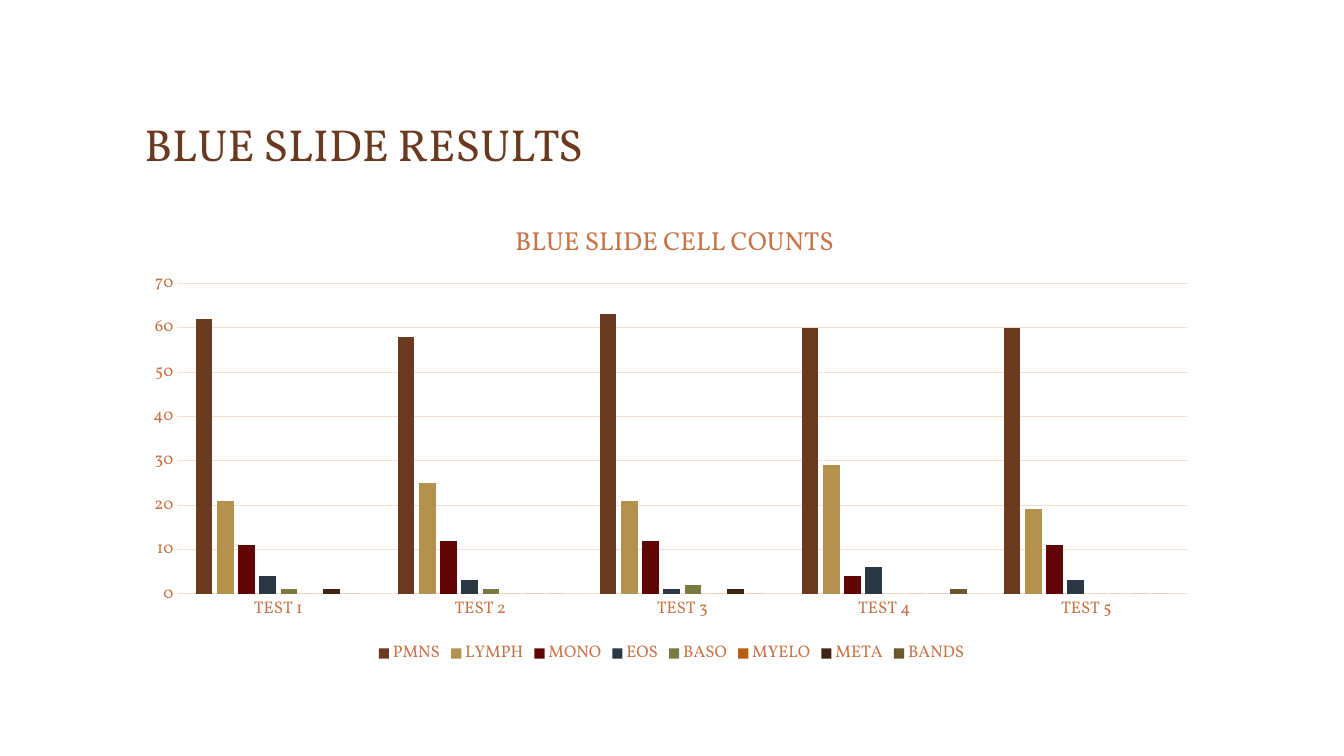
"""Build the blue slide results slide with its clustered column chart."""
from dataclasses import dataclass

import pptx
import pptx.chart.data
import pptx.dml.color
import pptx.enum.chart
import pptx.enum.text
import pptx.oxml
import pptx.oxml.ns
import pptx.util

Pt = pptx.util.Pt
RGBColor = pptx.dml.color.RGBColor

BROWN = RGBColor(0x6A, 0x3A, 0x20)
COPPER = RGBColor(0xC7, 0x73, 0x45)
GRID = RGBColor(0xF2, 0xDF, 0xD4)
GOLD = RGBColor(0xB4, 0x91, 0x4C)
MAROON = RGBColor(0x61, 0x06, 0x06)
NAVY = RGBColor(0x2B, 0x37, 0x42)
OLIVE = RGBColor(0x78, 0x7A, 0x41)
ORANGE = RGBColor(0xB9, 0x5E, 0x14)
DARK_BROWN = RGBColor(0x40, 0x23, 0x13)
BRONZE = RGBColor(0x6C, 0x57, 0x2D)
FONT_NAME = "Vollkorn"
LEFT, WIDTH = Pt(96), Pt(767.5)


@dataclass(frozen=True)
class CellType:
    name: str
    counts: tuple[int, ...]
    color: RGBColor


TESTS = [f"TEST {number}" for number in range(1, 6)]
CELL_TYPES = [
    CellType("PMNS", (62, 58, 63, 60, 60), BROWN),
    CellType("LYMPH", (21, 25, 21, 29, 19), GOLD),
    CellType("MONO", (11, 12, 12, 4, 11), MAROON),
    CellType("EOS", (4, 3, 1, 6, 3), NAVY),
    CellType("BASO", (1, 1, 2, 0, 0), OLIVE),
    CellType("MYELO", (0, 0, 0, 0, 0), ORANGE),
    CellType("META", (1, 0, 1, 0, 0), DARK_BROWN),
    CellType("BANDS", (0, 0, 0, 1, 0), BRONZE),
]


def set_attributes(target: object, values: dict[str, object]) -> None:
    for name, value in values.items():
        setattr(target, name, value)


def set_font(font: object, size: float, color: RGBColor) -> None:
    set_attributes(font, {"name": FONT_NAME, "size": Pt(size), "bold": False})
    font.color.rgb = color


def set_line(line: object) -> None:
    line.color.rgb = GRID
    line.width = Pt(0.75)


def set_layout(parent: object, before: str, values: dict[str, object]) -> None:
    for old in parent.findall(pptx.oxml.ns.qn("c:layout")):
        parent.remove(old)
    settings = "".join(f'<c:{tag} val="{value}"/>' for tag, value in values.items())
    layout = pptx.oxml.parse_xml(
        f'<c:layout {pptx.oxml.ns.nsdecls("c")}>'
        f"<c:manualLayout>{settings}</c:manualLayout></c:layout>"
    )
    parent.find(pptx.oxml.ns.qn(before)).addprevious(layout)


def add_title(slide: object) -> None:
    shape = slide.shapes.add_textbox(LEFT, Pt(34), WIDTH, Pt(92))
    set_attributes(shape.text_frame, {
        "word_wrap": True,
        "vertical_anchor": pptx.enum.text.MSO_ANCHOR.BOTTOM,
    })
    paragraph = shape.text_frame.paragraphs[0]
    paragraph.text = "BLUE SLIDE RESULTS"
    paragraph.line_spacing = 0.9
    set_font(paragraph.runs[0].font, 32, BROWN)


def format_axes(chart: object) -> None:
    for axis in (chart.category_axis, chart.value_axis):
        set_attributes(axis, {
            "major_tick_mark": pptx.enum.chart.XL_TICK_MARK.NONE,
            "minor_tick_mark": pptx.enum.chart.XL_TICK_MARK.NONE,
        })
        set_font(axis.tick_labels.font, 12, COPPER)
    set_line(chart.category_axis.format.line)
    set_attributes(chart.value_axis, {
        "minimum_scale": 0, "maximum_scale": 70, "major_unit": 10,
        "has_major_gridlines": True,
    })
    chart.value_axis.format.line.fill.background()
    set_line(chart.value_axis.major_gridlines.format.line)


def add_cell_chart(slide: object) -> None:
    data = pptx.chart.data.CategoryChartData()
    data.categories = TESTS
    for cell_type in CELL_TYPES:
        data.add_series(cell_type.name, cell_type.counts)
    chart = slide.shapes.add_chart(
        pptx.enum.chart.XL_CHART_TYPE.COLUMN_CLUSTERED,
        LEFT, Pt(142), WIDTH, Pt(336), data,
    ).chart
    set_font(chart.font, 10, BROWN)
    set_attributes(chart, {"has_title": True, "has_legend": True})
    set_attributes(chart.legend, {
        "position": pptx.enum.chart.XL_LEGEND_POSITION.BOTTOM,
        "include_in_layout": False,
    })
    set_font(chart.legend.font, 12, COPPER)
    title_paragraph = chart.chart_title.text_frame.paragraphs[0]
    title_paragraph.text = "BLUE SLIDE CELL COUNTS"
    set_font(title_paragraph.runs[0].font, 18.6, COPPER)
    chart.chart_title.include_in_layout = False
    format_axes(chart)
    plot = chart.plots[0]
    set_attributes(plot, {"gap_width": 219, "overlap": -27, "vary_by_categories": False})
    for series, cell_type in zip(plot.series, CELL_TYPES):
        series.format.fill.solid()
        series.format.fill.fore_color.rgb = cell_type.color
    plot_area = chart.element.find(".//" + pptx.oxml.ns.qn("c:plotArea"))
    set_layout(plot_area, "c:barChart", {
        "layoutTarget": "inner", "xMode": "edge", "yMode": "edge",
        "x": 0.04, "y": 0.18, "w": 0.94, "h": 0.66,
    })
    title_element = chart.element.find(".//" + pptx.oxml.ns.qn("c:title"))
    set_layout(title_element, "c:overlay", {
        "xMode": "edge", "yMode": "edge", "x": 0.35, "y": 0.04,
    })


def main() -> None:
    presentation = pptx.Presentation()
    set_attributes(presentation, {"slide_width": Pt(960), "slide_height": Pt(540)})
    slide = presentation.slides.add_slide(presentation.slide_layouts[6])
    add_title(slide)
    add_cell_chart(slide)
    presentation.save("out.pptx")


if __name__ == "__main__":
    main()
